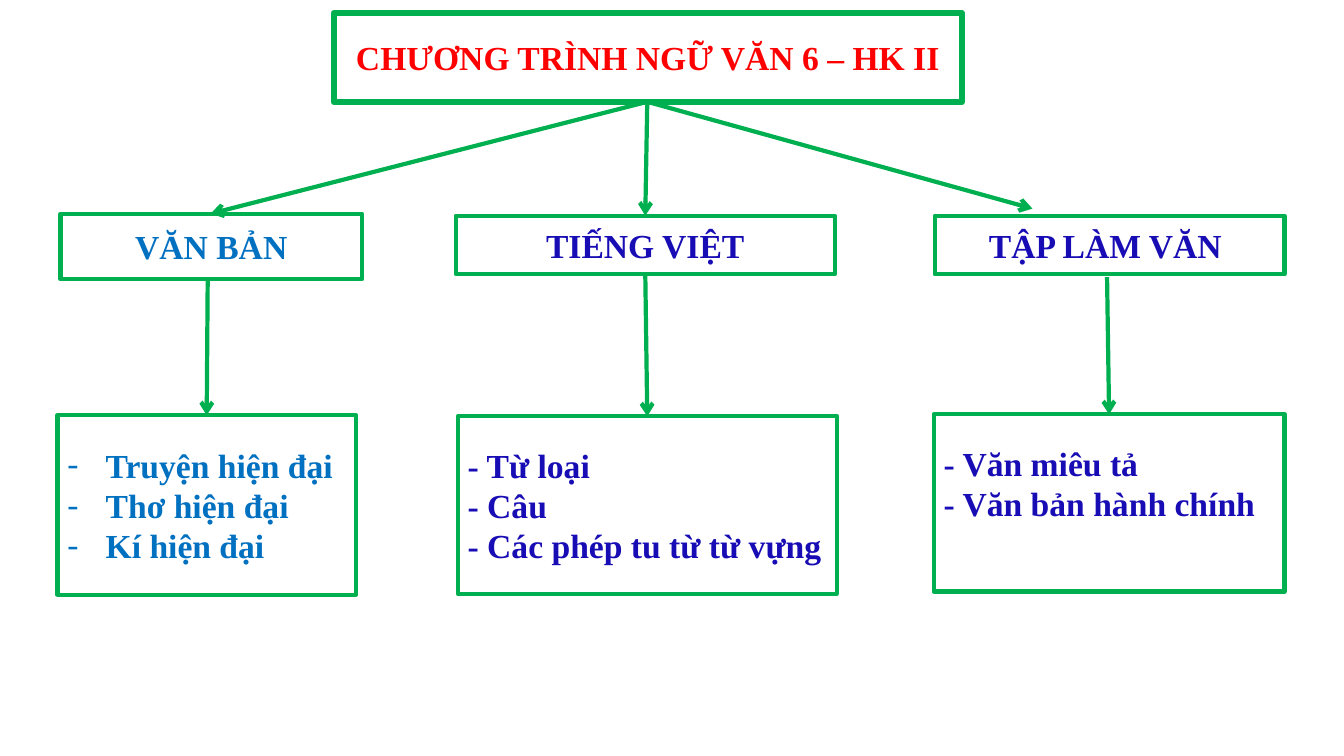
from dataclasses import dataclass

from lxml.etree import SubElement
from pptx import Presentation
from pptx.dml.color import RGBColor
from pptx.enum.shapes import MSO_CONNECTOR, MSO_SHAPE
from pptx.enum.text import MSO_ANCHOR, PP_ALIGN
from pptx.oxml.ns import qn
from pptx.slide import Slide
from pptx.text.text import _Paragraph
from pptx.util import Emu, Pt

EMU_PER_PX = 9144  # 100 px to the inch


@dataclass(frozen=True)
class Theme:
    font: str = "Times New Roman"
    text_size: int = 24
    line_width: float = 3
    title_line_width: float = 4.5
    green: RGBColor = RGBColor(0x00, 0xB0, 0x50)
    white: RGBColor = RGBColor(0xFF, 0xFF, 0xFF)
    red: RGBColor = RGBColor(0xFF, 0x00, 0x00)
    blue: RGBColor = RGBColor(0x00, 0x70, 0xC0)
    indigo: RGBColor = RGBColor(0x18, 0x0C, 0xB4)


THEME = Theme()


@dataclass(frozen=True)
class Box:
    left: int
    top: int
    width: int
    height: int
    lines: tuple[str, ...]
    color: RGBColor
    align: PP_ALIGN = PP_ALIGN.CENTER
    line_width: float = THEME.line_width
    filled: bool = True
    dashed_list: bool = False
    bottom_inset: int = 5


@dataclass(frozen=True)
class Arrow:
    start: tuple[int, int]
    end: tuple[int, int]


TITLE = Box(331, 13, 623, 88, ("CHƯƠNG TRÌNH NGỮ VĂN 6 – HK II",), THEME.red,
            line_width=THEME.title_line_width)
SUBJECTS = (
    Box(60, 212, 299, 65, ("VĂN BẢN",), THEME.blue, filled=False),
    Box(452, 214, 376, 58, ("TIẾNG VIỆT",), THEME.indigo),
    Box(927, 214, 347, 58, ("TẬP LÀM VĂN ",), THEME.indigo),
)
TOPICS = (
    Box(57, 412, 296, 178, ("Truyện hiện đại", "Thơ hiện đại", "Kí hiện đại"),
        THEME.blue, PP_ALIGN.JUSTIFY, dashed_list=True),
    Box(454, 413, 376, 176, ("- Từ loại", "- Câu", "- Các phép tu từ từ vựng"),
        THEME.indigo, PP_ALIGN.LEFT, filled=False),
    Box(926, 411, 348, 176, ("- Văn miêu tả", "- Văn bản hành chính"),
        THEME.indigo, PP_ALIGN.LEFT, bottom_inset=45),
)
TITLE_FOOT = (642, 101)
ARROWS = (
    *(Arrow(TITLE_FOOT, end) for end in ((209, 212), (640, 214), (1024, 207))),
    Arrow((206, 279), (205, 412)),
    Arrow((640, 272), (642, 413)),
    Arrow((1098, 275), (1100, 411)),
)


def px(length: int) -> Emu:
    return Emu(length * EMU_PER_PX)


def add_dash(paragraph: _Paragraph) -> None:
    """Give the paragraph a hanging dash as its bullet."""
    properties = paragraph._p.get_or_add_pPr()
    properties.set("marL", str(px(38)))
    properties.set("indent", str(-px(38)))
    SubElement(properties, qn("a:buFont"), typeface=THEME.font)
    SubElement(properties, qn("a:buChar"), char="-")


def draw_box(slide: Slide, box: Box) -> None:
    shape = slide.shapes.add_shape(
        MSO_SHAPE.RECTANGLE, px(box.left), px(box.top), px(box.width), px(box.height))
    shape.shadow.inherit = False
    if box.filled:
        shape.fill.solid()
        shape.fill.fore_color.rgb = THEME.white
    else:
        shape.fill.background()
    shape.line.color.rgb = THEME.green
    shape.line.width = Pt(box.line_width)

    frame = shape.text_frame
    frame.word_wrap = True
    frame.vertical_anchor = MSO_ANCHOR.MIDDLE
    frame.margin_bottom = px(box.bottom_inset)
    frame.text = "\n".join(box.lines)
    for paragraph in frame.paragraphs:
        paragraph.alignment = box.align
        if box.dashed_list:
            add_dash(paragraph)
        for run in paragraph.runs:
            run.font.name = THEME.font
            run.font.size = Pt(THEME.text_size)
            run.font.bold = True
            run.font.color.rgb = box.color


def draw_arrow(slide: Slide, arrow: Arrow) -> None:
    connector = slide.shapes.add_connector(
        MSO_CONNECTOR.STRAIGHT, *map(px, arrow.start + arrow.end))
    connector.line.color.rgb = THEME.green
    connector.line.width = Pt(THEME.line_width)
    SubElement(connector.line._get_or_add_ln(), qn("a:tailEnd"), type="arrow")
    SubElement(connector._element.spPr, qn("a:effectLst"))


def main() -> None:
    presentation = Presentation()
    presentation.slide_width = px(1333)
    presentation.slide_height = px(750)
    slide = presentation.slides.add_slide(presentation.slide_layouts[6])
    for box in (TITLE, *SUBJECTS, *TOPICS):
        draw_box(slide, box)
    for arrow in ARROWS:
        draw_arrow(slide, arrow)
    presentation.save("out.pptx")


if __name__ == "__main__":
    main()
